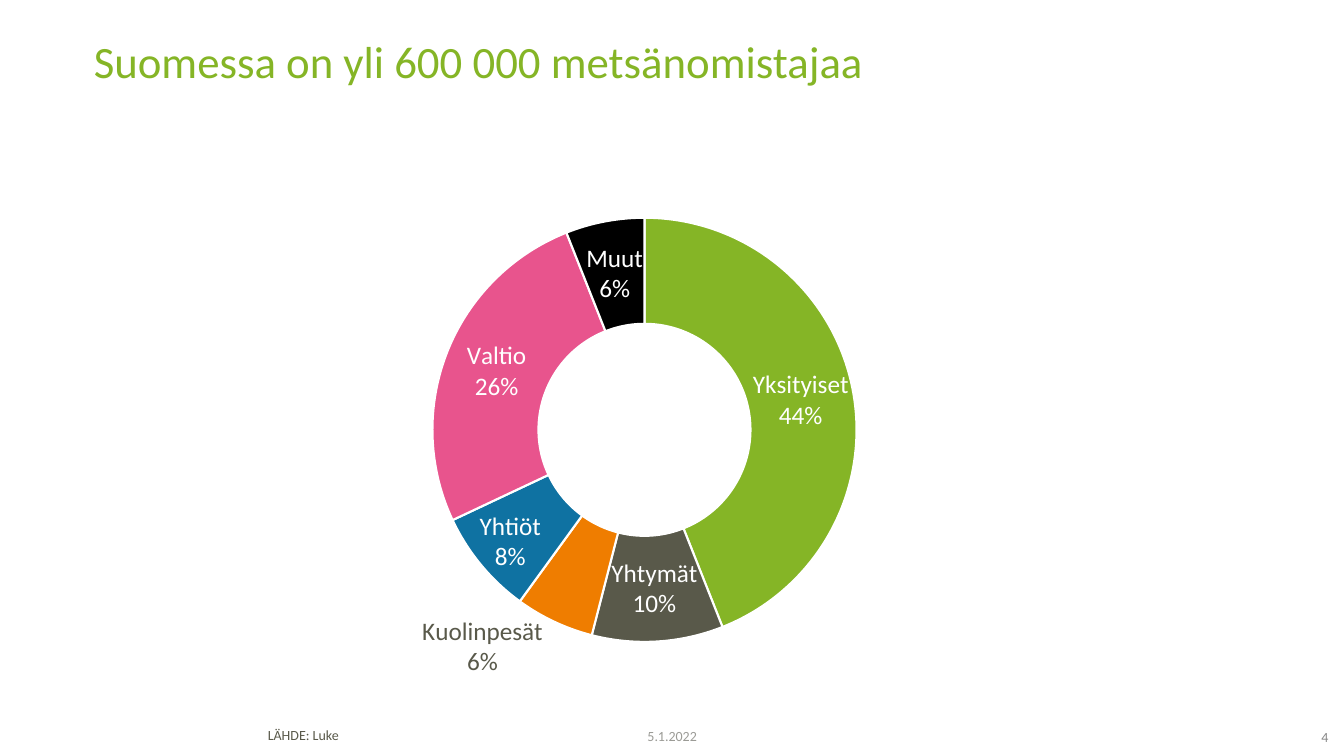
import dataclasses

import pptx
import pptx.chart.data
import pptx.dml.color
import pptx.enum.chart
import pptx.enum.text
import pptx.oxml
import pptx.oxml.ns
import pptx.util

Cm = pptx.util.Cm
Pt = pptx.util.Pt
qn = pptx.oxml.ns.qn
ANCHOR = pptx.enum.text.MSO_ANCHOR
ALIGN = pptx.enum.text.PP_ALIGN


@dataclasses.dataclass(frozen=True)
class Theme:
    font: str = "Calibri"
    green: str = "85B526"
    dark: str = "59594A"
    page_grey: str = "878787"
    date_grey: str = "9B9B96"
    white: str = "FFFFFF"
    title_size: int = 32
    label_size: int = 18
    small_size: int = 10


THEME = Theme()

# Owner group, share in percent, slice colour
OWNERS = [
    ("Yksityiset", 44, THEME.green),
    ("Yhtymät", 10, THEME.dark),
    ("Kuolinpesät", 6, "EF7D00"),
    ("Yhtiöt", 8, "0F72A2"),
    ("Valtio", 26, "E8548D"),
    ("Muut", 6, "000000"),
]

# Moved labels: slice index -> x and y shift (fraction of the chart), colour
MOVED_LABELS = {
    2: (-0.08, 0.14, THEME.dark),
    3: (-0.01, 0.02, THEME.white),
}


def rgb(color):
    return pptx.dml.color.RGBColor.from_string(color)


def style_font(font, size, color):
    font.name = THEME.font
    font.size = Pt(size)
    font.bold = False
    font.color.rgb = rgb(color)


def place(sp, left, top, width, height):
    sp.left, sp.top, sp.width, sp.height = map(Cm, (left, top, width, height))


def write_text(sp, text, size=THEME.small_size, color=THEME.dark,
               align=ALIGN.LEFT, anchor=ANCHOR.TOP, spacing=None, margins=None):
    tf = sp.text_frame
    tf.word_wrap = True
    tf.auto_size = pptx.enum.text.MSO_AUTO_SIZE.NONE
    tf.vertical_anchor = anchor
    if margins:
        (tf.margin_left, tf.margin_top,
         tf.margin_right, tf.margin_bottom) = map(Cm, margins)
    p = tf.paragraphs[0]
    p.alignment = align
    p.line_spacing = spacing
    r = p.add_run()
    r.text = text
    style_font(r.font, size, color)


def add_text(s, text, box, **fmt):
    write_text(s.shapes.add_textbox(*map(Cm, box)), text, **fmt)


def manual_layout(**values):
    """Build a c:layout element from its settings, in schema order."""
    items = "".join(f'<c:{k} val="{v}"/>' for k, v in values.items())
    return pptx.oxml.parse_xml(
        f'<c:layout {pptx.oxml.ns.nsdecls("c")}>'
        f"<c:manualLayout>{items}</c:manualLayout></c:layout>")


def show_name_and_percent(labels):
    """Show category and percent on two lines."""
    for tag, value in (("showVal", 0), ("showCatName", 1), ("showPercent", 1)):
        labels.find(qn(f"c:{tag}")).set("val", str(value))
    separator = pptx.oxml.parse_xml(
        f'<c:separator {pptx.oxml.ns.nsdecls("c")}>\n</c:separator>')
    labels.find(qn("c:showBubbleSize")).addnext(separator)


def move_label(series, index, x, y, color):
    label = series.points[index].data_label
    style_font(label.font, THEME.label_size, color)
    dlbl = series._element.find(qn("c:dLbls")).get_or_add_dLbl_for_point(index)
    old = dlbl.find(qn("c:layout"))
    if old is not None:
        dlbl.remove(old)
    dlbl.find(qn("c:idx")).addnext(manual_layout(x=x, y=y))
    show_name_and_percent(dlbl)


def add_owner_chart(s, box):
    data = pptx.chart.data.CategoryChartData()
    data.categories = [name for name, _, _ in OWNERS]
    data.add_series("Series 1", [share for _, share, _ in OWNERS])
    chart = s.shapes.add_chart(
        pptx.enum.chart.XL_CHART_TYPE.DOUGHNUT, *map(Cm, box), data).chart
    chart.has_title = False
    chart.has_legend = False
    style_font(chart.font, THEME.small_size, THEME.dark)

    # Ring position inside the chart frame
    area = chart._chartSpace.chart.plotArea
    old = area.find(qn("c:layout"))
    if old is not None:
        area.remove(old)
    area.insert(0, manual_layout(layoutTarget="inner", xMode="edge", yMode="edge",
                                 x=0.296, y=0.114, w=0.36, h=0.816))

    # Slices
    series = chart.plots[0].series[0]
    for i, (_, _, color) in enumerate(OWNERS):
        fmt = series.points[i].format
        fmt.fill.solid()
        fmt.fill.fore_color.rgb = rgb(color)
        fmt.line.color.rgb = rgb(THEME.white)
        fmt.line.width = Pt(1.5)

    # Labels
    labels = series.data_labels
    labels.number_format = "0%"
    labels.number_format_is_linked = False
    style_font(labels.font, THEME.label_size, THEME.white)
    show_name_and_percent(labels._element)
    for index, (x, y, color) in MOVED_LABELS.items():
        move_label(series, index, x, y, color)


def main():
    prs = pptx.Presentation()
    prs.slide_width, prs.slide_height = Cm(33.87), Cm(19.05)
    s = prs.slides.add_slide(prs.slide_layouts[5])

    # Title
    title = s.shapes.title
    place(title, 2.11, 0.99, 29.69, 2.49)
    write_text(title, "Suomessa on yli 600 000 metsänomistajaa",
               size=THEME.title_size, color=THEME.green, spacing=0.8)

    # Forest owners
    add_owner_chart(s, (2.11, 3.99, 29.69, 13.11))

    # Footer: source, date, page number
    add_text(s, "LÄHDE: Luke", (6.5, 18.24, 18.24, 0.69), spacing=0.85)
    add_text(s, "5.1.2022", (13.13, 18.16, 7.62, 0.79), color=THEME.date_grey,
             align=ALIGN.CENTER, anchor=ANCHOR.MIDDLE)
    add_text(s, "4", (32.13, 18.39, 1.35, 0.48), color=THEME.page_grey,
             align=ALIGN.RIGHT, anchor=ANCHOR.MIDDLE, margins=(0, 0, 0, 0.1))

    prs.save("out.pptx")


if __name__ == "__main__":
    main()
